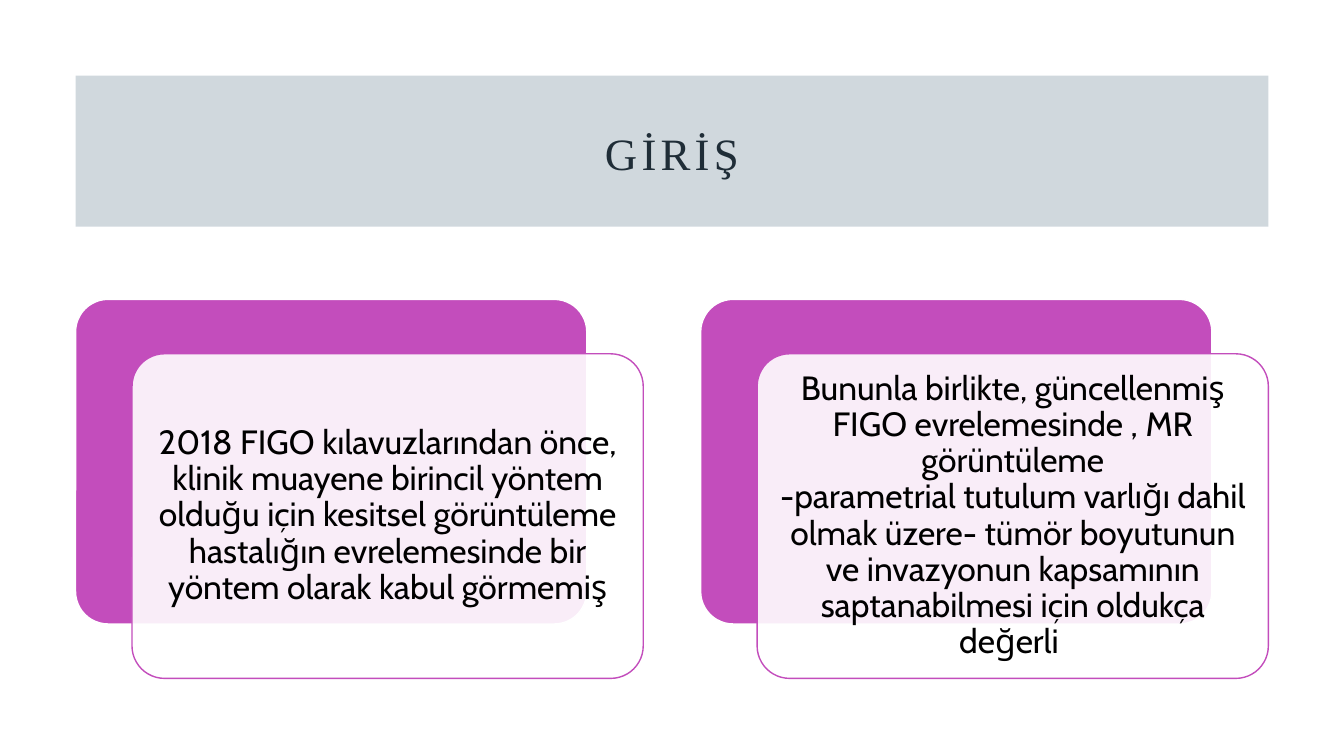
from dataclasses import dataclass

from lxml.etree import SubElement
from pptx import Presentation
from pptx.dml.color import RGBColor
from pptx.enum.shapes import MSO_SHAPE as Preset
from pptx.enum.text import MSO_ANCHOR as Anchor, PP_ALIGN as Align
from pptx.oxml.ns import qn
from pptx.util import Inches, Pt


@dataclass(frozen=True)
class Theme:
    band: str = "45647B"
    heading: str = "1F2D37"
    accent: str = "C34DBC"
    paper: str = "FFFFFF"
    ink: str = "000000"
    heading_font: str = "Times New Roman"
    body_font: str = "Cabin"
    heading_size: int = 32
    body_size: int = 24


THEME = Theme()
SLIDE_W, SLIDE_H = 13.33, 7.5
MARGIN = 0.75
CONTENT_W = SLIDE_W - 2 * MARGIN
BAND_H = SLIDE_H / 5

CARD_TOP = 2.97
CARD_W, CARD_H = 5.07, 3.22
FRONT_DX, FRONT_DY = 0.56, 0.54
COLUMN_STEP = CONTENT_W - CARD_W - FRONT_DX
TEXT_INSET = 0.095

NBSP = chr(160)  # keeps the joined words on one line
HEADING = "GİRİŞ"
CARDS = (
    "2018 FIGO kılavuzlarından önce, klinik muayene birincil yöntem olduğu "
    "için kesitsel görüntüleme hastalığın evrelemesinde bir yöntem olarak "
    "kabul görmemiş",
    "Bununla birlikte, güncellenmiş FIGO evrelemesinde , MR görüntüleme "
    f"-parametrial{NBSP}tutulum varlığı dahil olmak üzere- tümör boyutunun ve "
    f"invazyonun kapsamının saptanabilmesi için oldukça değerli{NBSP}",
)


def add_panel(slide, preset, box, fill, opacity=100, outline=None):
    """Draw a filled shape; box is left, top, width, height in inches."""
    panel = slide.shapes.add_shape(preset, *map(Inches, box))
    panel.shadow.inherit = False
    panel.fill.solid()
    panel.fill.fore_color.rgb = RGBColor.from_string(fill)
    if opacity < 100:
        color = panel.fill._xPr.find(qn("a:solidFill"))[0]
        SubElement(color, qn("a:alpha"), val=str(opacity * 1000))
    if outline:
        panel.line.color.rgb = RGBColor.from_string(outline)
        panel.line.width = Pt(1)
    else:
        panel.line.fill.background()
    return panel


def add_text(slide, text, box, *, font, size, color, spacing=0, inset=0.1):
    """Write one centred paragraph; spacing is the letter spacing in points."""
    frame = slide.shapes.add_textbox(*map(Inches, box)).text_frame
    frame.word_wrap = True
    frame.vertical_anchor = Anchor.MIDDLE
    frame.margin_left = frame.margin_right = Inches(inset)
    frame.margin_top = frame.margin_bottom = Inches(inset)
    paragraph = frame.paragraphs[0]
    paragraph.alignment = Align.CENTER
    paragraph.line_spacing = 0.9
    run = paragraph.add_run()
    run.text = text
    run.font.name = font
    run.font.size = Pt(size)
    run.font.color.rgb = RGBColor.from_string(color)
    if spacing:
        run.font._element.set("spc", str(spacing * 100))


def add_heading(slide, text):
    band = (MARGIN, MARGIN, CONTENT_W, BAND_H)
    add_panel(slide, Preset.RECTANGLE, band, THEME.band, opacity=25)
    add_text(slide, text, (1.53, 1.04, 10.27, 1.02), font=THEME.heading_font,
             size=THEME.heading_size, color=THEME.heading, spacing=3)


def add_card(slide, text, column):
    """Draw a coloured back panel with a shifted translucent one that holds text."""
    left = MARGIN + column * COLUMN_STEP
    front_left, front_top = left + FRONT_DX, CARD_TOP + FRONT_DY
    layers = (
        (left, CARD_TOP, THEME.accent, 100, THEME.paper),
        (front_left, front_top, THEME.paper, 90, THEME.accent),
    )
    for x, y, fill, opacity, outline in layers:
        panel = add_panel(slide, Preset.ROUNDED_RECTANGLE,
                          (x, y, CARD_W, CARD_H), fill, opacity, outline)
        panel.adjustments[0] = 0.1
    text_box = (front_left + TEXT_INSET, front_top + TEXT_INSET,
                CARD_W - 2 * TEXT_INSET, CARD_H - 2 * TEXT_INSET)
    add_text(slide, text, text_box, font=THEME.body_font,
             size=THEME.body_size, color=THEME.ink)


def main():
    deck = Presentation()
    deck.slide_width, deck.slide_height = Inches(SLIDE_W), Inches(SLIDE_H)
    slide = deck.slides.add_slide(deck.slide_layouts[6])
    add_heading(slide, HEADING)
    for column, text in enumerate(CARDS):
        add_card(slide, text, column)
    deck.save("out.pptx")


if __name__ == "__main__":
    main()
